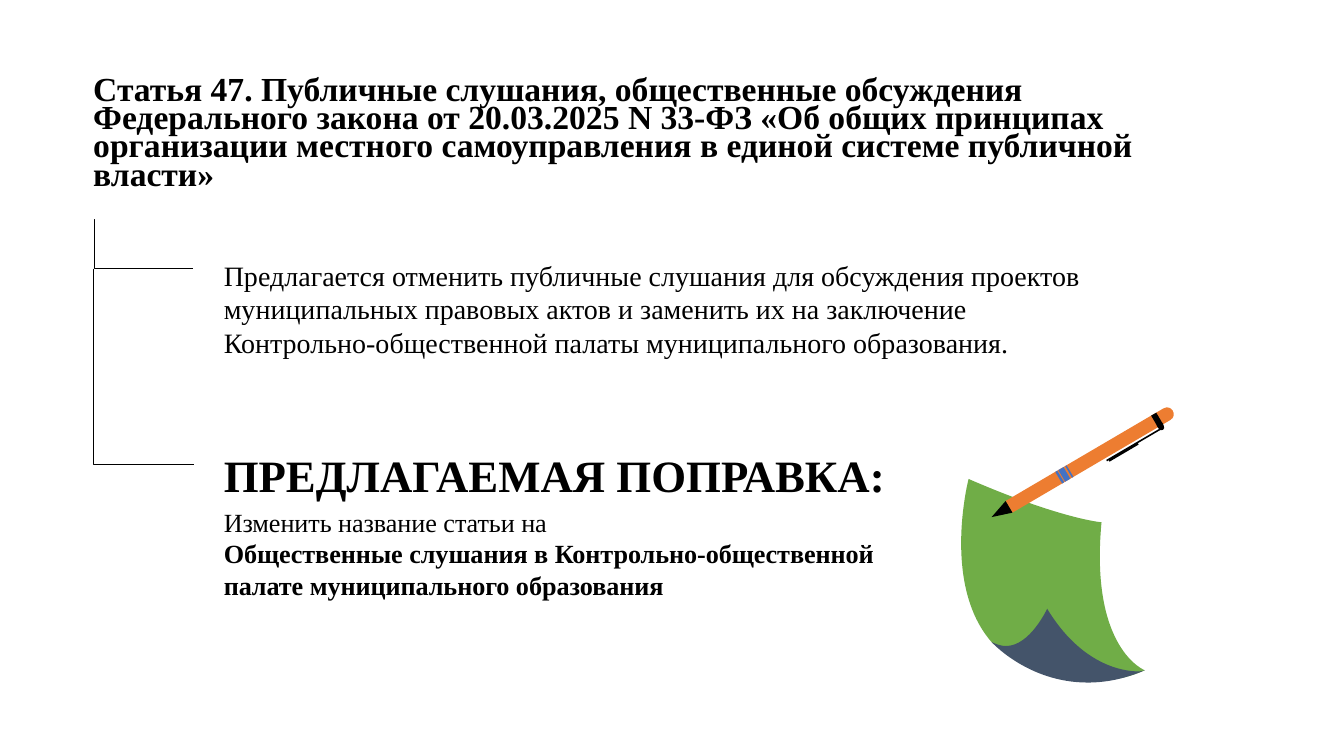
import math

from lxml import etree
from pptx import Presentation
from pptx import util as u
from pptx.dml import color as dml
from pptx.enum import shapes, text
from pptx.oxml import ns

FONT = "Times New Roman"
BLACK, GREEN, SLATE = "000000", "70AD47", "44546A"
ORANGE, BLUE = "ED7D31", "4472C4"
TEXT_LEFT = 5.31
PEN_TIP, PEN_ANGLE, PEN_HALF = (24.99, 13.03), math.radians(30.4), 0.17


def rgb(value):
    """Turn a hex string into a colour."""
    return dml.RGBColor.from_string(value)


def add_text(page, left, top, width, height, lines, size, spacing=None,
             anchor=text.MSO_ANCHOR.TOP):
    """Add a text box with one paragraph for each (wording, bold) pair."""
    box = page.shapes.add_textbox(*map(u.Cm, (left, top, width, height)))
    frame = box.text_frame
    frame.word_wrap = True
    frame.vertical_anchor = anchor
    frame.margin_left = frame.margin_right = u.Cm(0.33)
    frame.margin_top = frame.margin_bottom = u.Cm(0.33)
    for index, (wording, bold) in enumerate(lines):
        para = frame.add_paragraph() if index else frame.paragraphs[0]
        if spacing:
            para.line_spacing = spacing
        span = para.add_run()
        span.text = wording
        span.font.name = FONT
        span.font.size = u.Pt(size)
        span.font.bold = bold
        span.font.color.rgb = rgb(BLACK)


def add_elbow(page, left, top, right, bottom, bend):
    """Add a thin bracket line that runs down, then right."""
    line = page.shapes.add_connector(
        shapes.MSO_CONNECTOR.ELBOW, *map(u.Cm, (left, top, right, bottom)))
    line.line.color.rgb = rgb(BLACK)
    line.line.width = u.Pt(0.75)
    properties = line._element.spPr
    guides = properties.find(ns.qn("a:prstGeom")).get_or_add_avLst()
    etree.SubElement(guides, ns.qn("a:gd"), name="adj1", fmla=f"val {bend}")
    etree.SubElement(properties, ns.qn("a:effectLst"))


def add_outline(group, start, segments, fill):
    """Add a filled outline; one point is a straight side, three a curve."""
    points = [point for segment in segments for point in segment]
    builder = group.shapes.build_freeform(*map(u.Cm, start))
    builder.add_line_segments([(u.Cm(x), u.Cm(y)) for x, y in points])
    shape = builder.convert_to_shape()
    track = next(shape._element.iter(ns.qn("a:path")))
    sides = iter(track.findall(ns.qn("a:lnTo")))
    for segment in segments:
        side = next(sides)
        if len(segment) == 3:
            bend = etree.SubElement(track, ns.qn("a:cubicBezTo"))
            track.replace(side, bend)
            for part in (side, next(sides), next(sides)):
                bend.append(part[0])
                if part.getparent() is not None:
                    track.remove(part)
    etree.SubElement(track, ns.qn("a:close"))
    shape.shadow.inherit = False
    shape.fill.solid()
    shape.fill.fore_color.rgb = rgb(fill)
    shape.line.fill.background()


def add_pen_part(group, start, segments, fill):
    """Add an outline given by distances along and across the pen."""
    cos, sin = math.cos(PEN_ANGLE), math.sin(PEN_ANGLE)

    def place(point):
        """Find where a point of the pen lies on the slide."""
        along, across = point
        return (PEN_TIP[0] + along * cos + across * sin,
                PEN_TIP[1] - along * sin + across * cos)

    add_outline(group, place(start),
                [[place(point) for point in segment] for segment in segments],
                fill)


def add_band(group, start, end, fill, top=-PEN_HALF, bottom=PEN_HALF):
    """Add a strip between two distances along the pen."""
    add_pen_part(group, (start, top),
                 [[(end, top)], [(end, bottom)], [(start, bottom)]], fill)


def add_paper(page):
    """Draw the sheet with its folded corner."""
    group = page.shapes.add_group_shape()
    corner, left, right = (24.41, 12.07), (24.99, 16.18), (28.85, 16.89)
    peak, shoulder = (26.39, 15.34), (27.76, 13.16)
    add_outline(group, corner, [
        (corner, (23.72, 14.73), left),
        (left, (26.09, 17.15), (27.58, 17.15)),
        ((27.99, 17.15), (28.42, 17.09), right),
        (right, (27.46, 16.36), shoulder),
        ((27.69, 13.16), (26.62, 13.03), corner)], GREEN)
    add_outline(group, peak, [
        (peak, (25.96, 16.28), (25.35, 16.28)),
        ((25.22, 16.28), (25.1, 16.23), left),
        (left, (25.91, 17.2), (27.41, 17.2)),
        ((27.84, 17.2), (28.32, 17.12), right),
        (right, (28.78, 16.92), (28.7, 16.92)),
        ((28.3, 16.92), (27.25, 16.76), peak)], SLATE)


def add_pen(page):
    """Draw the pen with its nib, bands and clip."""
    group = page.shapes.add_group_shape()
    add_pen_part(group, (0.51, -PEN_HALF), [
        [(5.12, -PEN_HALF)],
        [(5.35, -PEN_HALF), (5.35, PEN_HALF), (5.12, PEN_HALF)],
        [(0.51, PEN_HALF)]], ORANGE)
    add_pen_part(group, (0, 0),
                 [[(0.51, -PEN_HALF)], [(0.51, PEN_HALF)]], BLACK)
    add_band(group, 4.76, 4.91, BLACK)
    for start, end in ((2.05, 2.2), (1.96, 2.02), (2.25, 2.29)):
        add_band(group, start, end, BLUE)
    add_pen_part(group, (4.76, 0.11), [
        [(4.91, 0.11)], [(4.91, 0.2)],
        [(4.91, 0.32), (4.76, 0.32), (4.76, 0.2)]], BLACK)
    add_band(group, 3.22, 4.85, BLACK, 0.22, 0.26)
    add_band(group, 3.27, 4.12, BLACK, 0.24, 0.3)


def main():
    """Build the slide and save the deck."""
    deck = Presentation()
    deck.slide_width, deck.slide_height = u.Cm(33.87), u.Cm(19.05)
    page = deck.slides.add_slide(deck.slide_layouts[6])
    add_elbow(page, 2.37, 5.53, 4.87, 6.77, 600)
    add_elbow(page, 2.36, 6.77, 4.88, 11.7, 0)
    add_text(page, 2.02, 1.66, 26.95, 3.28, [(
        "Статья 47. Публичные слушания, общественные обсуждения "
        "Федерального закона от 20.03.2025 N 33-ФЗ «Об общих принципах "
        "организации местного самоуправления в единой системе публичной "
        "власти»", True)], 24, spacing=0.7)
    add_paper(page)
    add_pen(page)
    add_text(page, TEXT_LEFT, 6.18, 23.11, 3.86, [(
        "Предлагается отменить публичные слушания для обсуждения проектов "
        "муниципальных правовых актов и заменить их на заключение "
        "Контрольно-общественной палаты муниципального образования.",
        False)], 20)
    add_text(page, TEXT_LEFT, 11.66, 17.96, 1.3,
             [("ПРЕДЛАГАЕМАЯ ПОПРАВКА:", True)], 32,
             anchor=text.MSO_ANCHOR.BOTTOM)
    add_text(page, TEXT_LEFT, 12.43, 17.93, 3.86, [
        ("Изменить название статьи на", False),
        ("Общественные слушания в Контрольно-общественной палате "
         "муниципального образования", True)], 18.67)
    deck.save("out.pptx")


if __name__ == "__main__":
    main()
